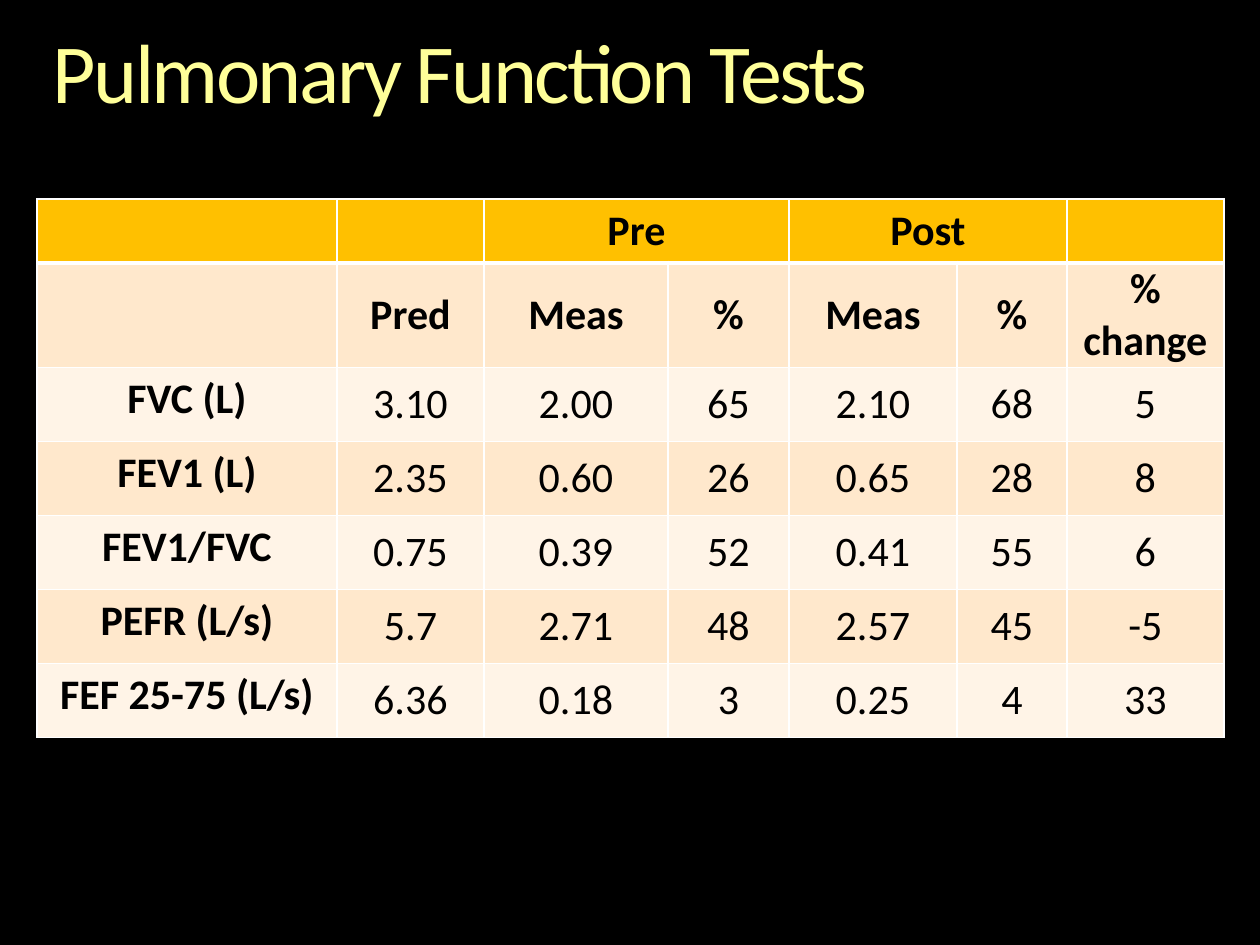
from dataclasses import dataclass

from lxml import etree
from pptx import Presentation
from pptx.dml.color import RGBColor
from pptx.enum.text import MSO_ANCHOR, MSO_AUTO_SIZE, PP_ALIGN
from pptx.oxml.ns import qn
from pptx.util import Pt

SCALE = 914400 / 126
TOP, MIDDLE = MSO_ANCHOR.TOP, MSO_ANCHOR.MIDDLE
LEFT, CENTER = PP_ALIGN.LEFT, PP_ALIGN.CENTER
NO_AUTOFIT = MSO_AUTO_SIZE.NONE
TITLE_ONLY = 5


@dataclass(frozen=True)
class Theme:
    font: str = "Calibri"
    title_size: int = 48
    table_size: int = 24
    background: str = "000000"
    text: str = "000000"
    header: str = "FFC000"
    bands: tuple = ("FFE8CC", "FFF4E7")
    border: str = "FFFFFF"
    thin: int = 1
    thick: int = 3
    title_stops: tuple = ((0, "FFFFB9"), (36, "FFFF99"), (86, "F6AE1E"))


THEME = Theme()
TITLE = "Pulmonary Function Tests"
COLUMNS = (300, 147, 184, 121, 168, 110, 157)
ROWS = (59, 59, 74, 74, 74, 74, 74)
RESULTS = (
    ("", "", "Pre", "", "Post", "", ""),
    ("", "Pred", "Meas", "%", "Meas", "%", "% change"),
    ("FVC (L)", "3.10", "2.00", "65", "2.10", "68", "5"),
    ("FEV1 (L)", "2.35", "0.60", "26", "0.65", "28", "8"),
    ("FEV1/FVC", "0.75", "0.39", "52", "0.41", "55", "6"),
    ("PEFR (L/s)", "5.7", "2.71", "48", "2.57", "45", "-5"),
    ("FEF 25-75 (L/s)", "6.36", "0.18", "3", "0.25", "4", "33"),
)


def px(n):
    return round(n * SCALE)


def add_run(p, text, size):
    r = p.add_run()
    r.text = text
    r.font.name = THEME.font
    r.font.size = Pt(size)
    return r


def set_margins(box, n):
    box.margin_left = box.margin_right = px(n)
    box.margin_top = box.margin_bottom = px(n)


def fill_gradient(r):
    rPr = r.font._element
    rPr.set("spc", "-150")
    grad = etree.Element(qn("a:gradFill"))
    stops = etree.SubElement(grad, qn("a:gsLst"))
    for position, color in THEME.title_stops:
        stop = etree.SubElement(stops, qn("a:gs"), pos=str(position * 1000))
        etree.SubElement(stop, qn("a:srgbClr"), val=color)
    etree.SubElement(grad, qn("a:lin"), ang="5400000", scaled="0")
    rPr.insert(0, grad)


def add_title(s, x, y, w, h):
    sp = s.shapes.title
    sp.left, sp.top, sp.width, sp.height = map(px, (x, y, w, h))
    tf = sp.text_frame
    tf.word_wrap = True
    tf.auto_size = NO_AUTOFIT
    tf.vertical_anchor = TOP
    set_margins(tf, 0)
    p = tf.paragraphs[0]
    p.alignment = LEFT
    p.line_spacing = 0.9
    fill_gradient(add_run(p, TITLE, THEME.title_size))


def set_borders(cell, row):
    tcPr = cell._tc.get_or_add_tcPr()
    widths = {
        "L": THEME.thin,
        "R": THEME.thin,
        "T": THEME.thick if row == 1 else THEME.thin,
        "B": THEME.thick if row == 0 else THEME.thin,
    }
    for side, width in widths.items():
        ln = etree.SubElement(tcPr, qn(f"a:ln{side}"), w=str(Pt(width)))
        fill = etree.SubElement(ln, qn("a:solidFill"))
        etree.SubElement(fill, qn("a:srgbClr"), val=THEME.border)


def format_cell(cell, row, col, text):
    set_borders(cell, row)
    cell.fill.solid()
    color = THEME.bands[(row - 1) % 2] if row else THEME.header
    cell.fill.fore_color.rgb = RGBColor.from_string(color)
    if row and col:
        cell.vertical_anchor = MIDDLE
        set_margins(cell, 1)
    if text:
        p = cell.text_frame.paragraphs[0]
        p.alignment = CENTER
        r = add_run(p, text, THEME.table_size)
        r.font.bold = row < 2 or col == 0
        r.font.color.rgb = RGBColor.from_string(THEME.text)


def add_results(s, x, y):
    frame = s.shapes.add_table(
        len(ROWS), len(COLUMNS), px(x), px(y), px(sum(COLUMNS)), px(sum(ROWS))
    )
    table = frame.table
    table.horz_banding = False
    for column, width in zip(table.columns, COLUMNS):
        column.width = px(width)
    for row, height in zip(table.rows, ROWS):
        row.height = px(height)
    for i, values in enumerate(RESULTS):
        for j, text in enumerate(values):
            format_cell(table.cell(i, j), i, j, text)
    for start in (2, 4):
        table.cell(0, start).merge(table.cell(0, start + 1))


def main():
    prs = Presentation()
    prs.slide_width, prs.slide_height = px(1260), px(945)
    s = prs.slides.add_slide(prs.slide_layouts[TITLE_ONLY])
    s.background.fill.solid()
    s.background.fill.fore_color.rgb = RGBColor.from_string(THEME.background)
    add_title(s, 53, 31, 1155, 92)
    add_results(s, 37, 199)
    prs.save("out.pptx")


if __name__ == "__main__":
    main()
